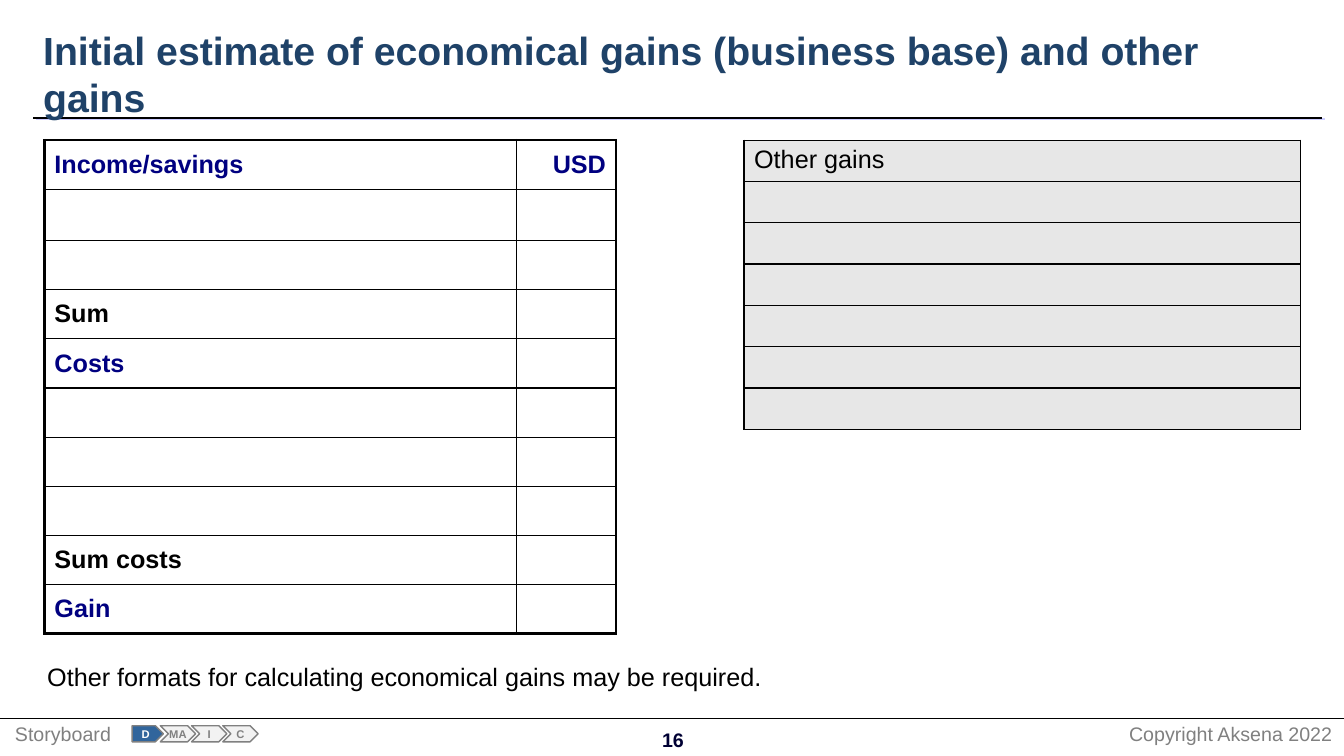
from lxml import etree
from pptx import Presentation
from pptx.dml.color import RGBColor
from pptx.enum.shapes import MSO_CONNECTOR, MSO_SHAPE
from pptx.enum.text import MSO_ANCHOR, PP_ALIGN
from pptx.oxml import parse_xml
from pptx.oxml.ns import nsdecls, qn
from pptx.util import Inches, Pt

LEFT, CENTER, RIGHT = PP_ALIGN.LEFT, PP_ALIGN.CENTER, PP_ALIGN.RIGHT
TOP, MIDDLE = MSO_ANCHOR.TOP, MSO_ANCHOR.MIDDLE
STRAIGHT = MSO_CONNECTOR.STRAIGHT
PENTAGON, CHEVRON = MSO_SHAPE.PENTAGON, MSO_SHAPE.CHEVRON

BLACK = RGBColor(0x00, 0x00, 0x00)
WHITE = RGBColor(0xFF, 0xFF, 0xFF)
TITLE_BLUE = RGBColor(0x1F, 0x42, 0x68)
NAVY = RGBColor(0x00, 0x00, 0x80)
DARK_NAVY = RGBColor(0x00, 0x00, 0x33)
GREY = RGBColor(0x80, 0x80, 0x80)
LIGHT_GREY = RGBColor(0xE7, 0xE7, 0xE7)
STEP_GREY = RGBColor(0xF2, 0xF2, 0xF2)
STEP_BLUE = RGBColor(0x31, 0x65, 0x9C)
SHADOW = RGBColor(0xCC, 0xCC, 0xFF)

THIN, THICK = 1, 2.25


def effects(shadow):
    """Effect list, either empty or with one offset shadow."""
    xml = ""
    if shadow:
        xml = (f'<a:outerShdw dist="{Pt(2.2)}" dir="1620000" algn="ctr" rotWithShape="0">'
               f'<a:srgbClr val="{SHADOW}"/></a:outerShdw>')
    return parse_xml(f'<a:effectLst {nsdecls("a")}>{xml}</a:effectLst>')


class SlideBuilder:
    def __init__(self, slide, font="Arial"):
        self.s = slide
        self.font = font

    def add_label(self, tf, text, size, color, bold=False, align=LEFT):
        p = tf.paragraphs[0]
        p.alignment = align
        r = p.add_run()
        r.text = text
        for name, value in {"name": self.font, "size": Pt(size), "bold": bold}.items():
            setattr(r.font, name, value)
        r.font.color.rgb = color
        return r

    def text(self, x, y, w, h, text, size, color, bold=False, align=LEFT,
             wrap=False, anchor=TOP, shadow=False):
        tf = self.s.shapes.add_textbox(Inches(x), Inches(y), Inches(w), Inches(h)).text_frame
        tf.word_wrap = wrap
        tf.vertical_anchor = anchor
        r = self.add_label(tf, text, size, color, bold, align)
        if shadow:
            r.font._element.find(qn("a:latin")).addprevious(effects(True))

    def line(self, x1, x2, y, width, shadow=False):
        c = self.s.shapes.add_connector(STRAIGHT, Inches(x1), Inches(y), Inches(x2), Inches(y))
        c.line.color.rgb = BLACK
        c.line.width = Pt(width)
        c._element.spPr.append(effects(shadow))

    def step(self, kind, x, y, w, h, text, fill, color):
        sp = self.s.shapes.add_shape(kind, Inches(x), Inches(y), Inches(w), Inches(h))
        sp.shadow.inherit = False
        sp.fill.solid()
        sp.fill.fore_color.rgb = fill
        sp.line.color.rgb = GREY
        sp.line.width = Pt(1)
        tf = sp.text_frame
        frame = {"word_wrap": False, "vertical_anchor": MIDDLE, "margin_left": 0,
                 "margin_right": 0, "margin_top": 0, "margin_bottom": 0}
        for name, value in frame.items():
            setattr(tf, name, value)
        self.add_label(tf, text, 8, color, True, CENTER)

    def table(self, x, y, cols, rows, texts, outer=THIN, fill=None, anchor=TOP):
        """texts maps (row, column) to the arguments of add_label."""
        w, h = Inches(sum(cols)), Inches(sum(rows))
        tbl = self.s.shapes.add_table(len(rows), len(cols), Inches(x), Inches(y), w, h).table
        tbl.first_row = tbl.horz_banding = False
        for col, width in zip(tbl.columns, cols):
            col.width = Inches(width)
        for i, height in enumerate(rows):
            tbl.rows[i].height = Inches(height)
            for j in range(len(cols)):
                cell = tbl.cell(i, j)
                cell.vertical_anchor = anchor
                edges = {"lnL": j == 0, "lnR": j == len(cols) - 1,
                         "lnT": i == 0, "lnB": i == len(rows) - 1}
                self.borders(cell, {tag: outer if edge else THIN for tag, edge in edges.items()})
                if fill is None:
                    cell.fill.background()
                else:
                    cell.fill.solid()
                    cell.fill.fore_color.rgb = fill
                if (i, j) in texts:
                    self.add_label(cell.text_frame, *texts[i, j])

    def borders(self, cell, widths):
        tcPr = cell._tc.get_or_add_tcPr()
        for tag, width in widths.items():
            ln = etree.SubElement(tcPr, qn(f"a:{tag}"), w=str(Pt(width)))
            solid = etree.SubElement(ln, qn("a:solidFill"))
            etree.SubElement(solid, qn("a:srgbClr"), val=str(BLACK))


def main():
    prs = Presentation()
    prs.slide_width, prs.slide_height = Inches(13.33), Inches(7.5)
    b = SlideBuilder(prs.slides.add_slide(prs.slide_layouts[6]))

    # Rules and footer
    b.line(0.33, 13.11, 1.17, 1.5, shadow=True)
    b.line(0, 13.33, 7.13, 0.75)
    b.text(6.13, 7.17, 1.09, 0.34, "16", 14, DARK_NAVY, bold=True, align=CENTER, wrap=True)
    b.text(11.1, 7.11, 2.23, 0.34, "Copyright Aksena 2022", 14, GREY)
    b.text(0.05, 7.11, 1.16, 0.34, "Storyboard", 14, GREY)

    # Title
    b.text(0.33, 0.3, 12.11, 0.85,
           "Initial estimate of economical gains (business base) and other gains",
           28, TITLE_BLUE, bold=True, wrap=True, anchor=MIDDLE, shadow=True)

    # Income and costs
    labels = {0: ("Income/savings", NAVY), 3: ("Sum", BLACK), 4: ("Costs", NAVY),
              8: ("Sum costs", BLACK), 9: ("Gain", NAVY)}
    texts = {(i, 0): (label, 18, color, True) for i, (label, color) in labels.items()}
    texts[0, 1] = ("USD", 18, NAVY, True, RIGHT)
    b.table(0.44, 1.39, [4.68, 0.99], [0.49, 0.51, 0.48] + [0.49] * 4 + [0.48] + [0.49] * 2,
            texts, outer=THICK, anchor=MIDDLE)

    # Other gains
    b.table(7.38, 1.39, [5.52], [0.41] * 7, {(0, 0): ("Other gains", 18, BLACK)},
            fill=LIGHT_GREY)
    b.text(0.37, 6.51, 7.35, 0.4,
           "Other formats for calculating economical gains may be required.", 18, BLACK)

    # Phase markers
    b.step(PENTAGON, 1.31, 7.2, 0.31, 0.16, "D", STEP_BLUE, WHITE)
    for i, phase in enumerate(["MA", "I", "C"]):
        b.step(CHEVRON, 1.59 + 0.31 * i, 7.2, 0.35, 0.16, phase, STEP_GREY, GREY)

    prs.save("out.pptx")


if __name__ == "__main__":
    main()
